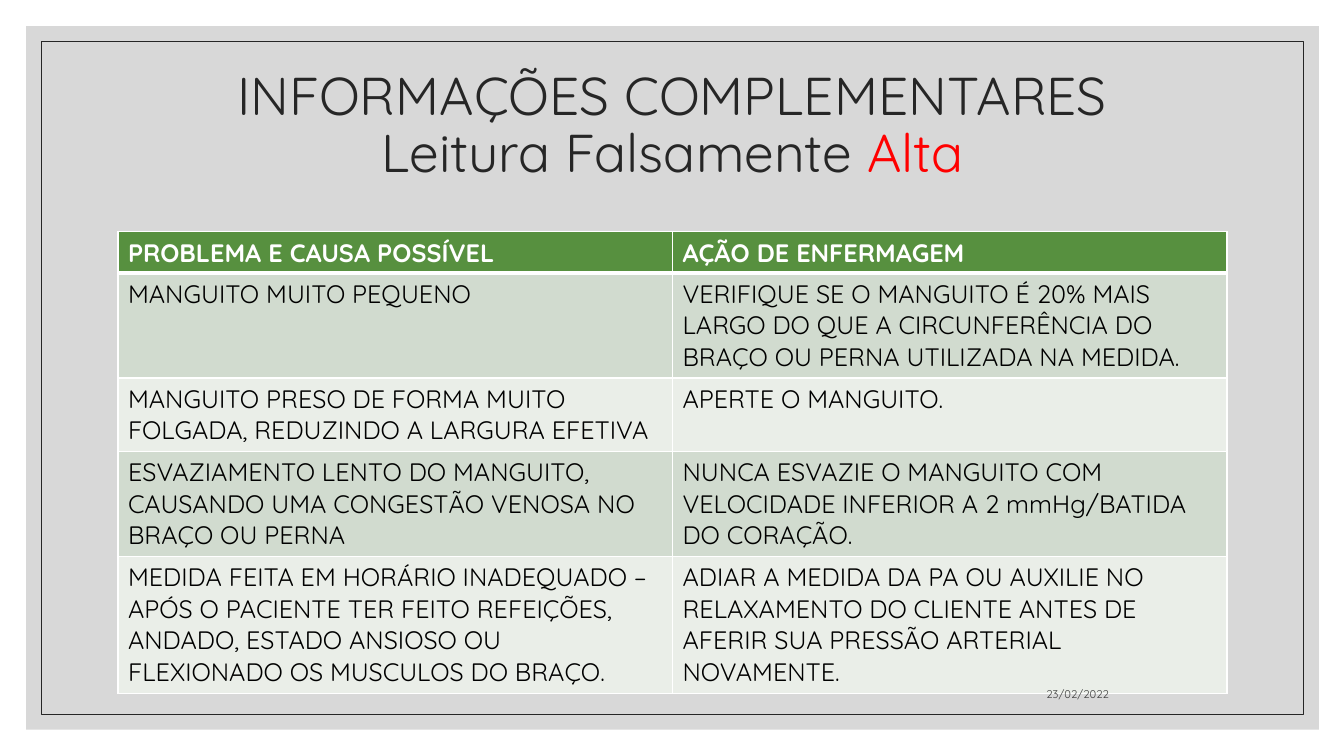
from lxml import etree
from pptx import Presentation
from pptx import util as u
from pptx.dml.color import RGBColor
from pptx.enum import shapes, text
from pptx.oxml.ns import qn

FONT = "Quicksand"
COLORS = {
    "panel": "BFBFBF", "ink": "262626", "alert": "FF0000", "white": "FFFFFF",
    "header": "57903F", "odd": "D1DBCF", "even": "EAEEE8", "body": "000000",
    "date": "404040",
}
HEADINGS = ("PROBLEMA E CAUSA POSSÍVEL", "AÇÃO DE ENFERMAGEM")
PROBLEMS = [
    ("MANGUITO MUITO PEQUENO",
     "VERIFIQUE SE O MANGUITO É 20% MAIS LARGO DO QUE A CIRCUNFERÊNCIA DO "
     "BRAÇO OU PERNA UTILIZADA NA MEDIDA."),
    ("MANGUITO PRESO DE FORMA MUITO FOLGADA, REDUZINDO A LARGURA EFETIVA",
     "APERTE O MANGUITO."),
    ("ESVAZIAMENTO LENTO DO MANGUITO, CAUSANDO UMA CONGESTÃO VENOSA NO "
     "BRAÇO OU PERNA",
     "NUNCA ESVAZIE O MANGUITO COM VELOCIDADE INFERIOR A 2 mmHg/BATIDA DO "
     "CORAÇÃO."),
    ("MEDIDA FEITA EM HORÁRIO INADEQUADO – APÓS O PACIENTE TER FEITO "
     "REFEIÇÕES, ANDADO, ESTADO ANSIOSO OU FLEXIONADO OS MUSCULOS DO BRAÇO.",
     "ADIAR A MEDIDA DA PA OU AUXILIE NO RELAXAMENTO DO CLIENTE ANTES DE "
     "AFERIR SUA PRESSÃO ARTERIAL NOVAMENTE."),
]
ROW_HEIGHTS = (0.41, 1.04, 0.73, 1.04, 1.36)


def rgb(name):
    return RGBColor.from_string(COLORS[name])


def inches(box):
    return [u.Inches(length) for length in box]


def style(paragraph, size, color, bold=False):
    font = paragraph.font
    font.name, font.size, font.bold = FONT, u.Pt(size), bold
    font.color.rgb = rgb(color)


def add_backdrop(slide, box):
    left, top, width, height = box
    inset = 0.15
    panel = slide.shapes.add_shape(shapes.MSO_SHAPE.RECTANGLE, *inches(box))
    panel.shadow.inherit = False
    panel.fill.solid()
    panel.fill.fore_color.rgb = rgb("panel")
    panel.line.fill.background()
    tint = panel.fill._xPr.find(qn("a:solidFill"))[0]
    etree.SubElement(tint, qn("a:alpha"), val="60000")

    frame = slide.shapes.add_shape(
        shapes.MSO_SHAPE.RECTANGLE,
        *inches((left + inset, top + inset, width - 2 * inset, height - 2 * inset)))
    frame.shadow.inherit = False
    frame.fill.background()
    frame.line.color.rgb = rgb("ink")
    frame.line.width = u.Pt(0.5)


def add_text(slide, box, anchor, align, size, color):
    text_frame = slide.shapes.add_textbox(*inches(box)).text_frame
    text_frame.word_wrap = True
    text_frame.vertical_anchor = anchor
    paragraph = text_frame.paragraphs[0]
    paragraph.alignment = align
    style(paragraph, size, color)
    return paragraph


def add_title(slide, box):
    title = add_text(slide, box, text.MSO_ANCHOR.MIDDLE, text.PP_ALIGN.CENTER,
                     38, "ink")
    title.line_spacing = 0.9
    title.add_run().text = "INFORMAÇÕES COMPLEMENTARES"
    title.add_line_break()
    title.add_run().text = "Leitura Falsamente "
    level = title.add_run()
    level.text = "Alta"
    level.font.color.rgb = rgb("alert")


def add_date(slide, box):
    date = add_text(slide, box, text.MSO_ANCHOR.BOTTOM, text.PP_ALIGN.RIGHT,
                    8, "date")
    date.add_run().text = "23/02/2022"


def add_borders(cell, bottom_width):
    properties = cell._tc.get_or_add_tcPr()
    for side, width in (("L", 1), ("R", 1), ("T", 1), ("B", bottom_width)):
        border = etree.SubElement(properties, qn(f"a:ln{side}"), w=str(u.Pt(width)))
        fill = etree.SubElement(border, qn("a:solidFill"))
        etree.SubElement(fill, qn("a:srgbClr"), val=COLORS["white"])


def add_problem_table(slide, box):
    rows = [HEADINGS, *PROBLEMS]
    table = slide.shapes.add_table(len(rows), len(HEADINGS), *inches(box)).table
    for row, height in zip(table.rows, ROW_HEIGHTS):
        row.height = u.Inches(height)
    for index, entries in enumerate(rows):
        heading = index == 0
        fill = "header" if heading else "odd" if index % 2 else "even"
        for column, entry in enumerate(entries):
            cell = table.cell(index, column)
            add_borders(cell, 3 if heading else 1)
            cell.fill.solid()
            cell.fill.fore_color.rgb = rgb(fill)
            cell.text = entry
            style(cell.text_frame.paragraphs[0], 18,
                  "white" if heading else "body", heading)


def main():
    deck = Presentation()
    deck.slide_width, deck.slide_height = u.Inches(13.33), u.Inches(7.5)
    slide = deck.slides.add_slide(deck.slide_layouts[6])
    add_backdrop(slide, (0.26, 0.26, 12.82, 6.98))
    add_title(slide, (1.17, 0.51, 11, 1.5))
    add_problem_table(slide, (1.17, 2.3, 11, sum(ROW_HEIGHTS)))
    add_date(slide, (7.94, 6.6, 3.16, 0.4))
    deck.save("out.pptx")


if __name__ == "__main__":
    main()
